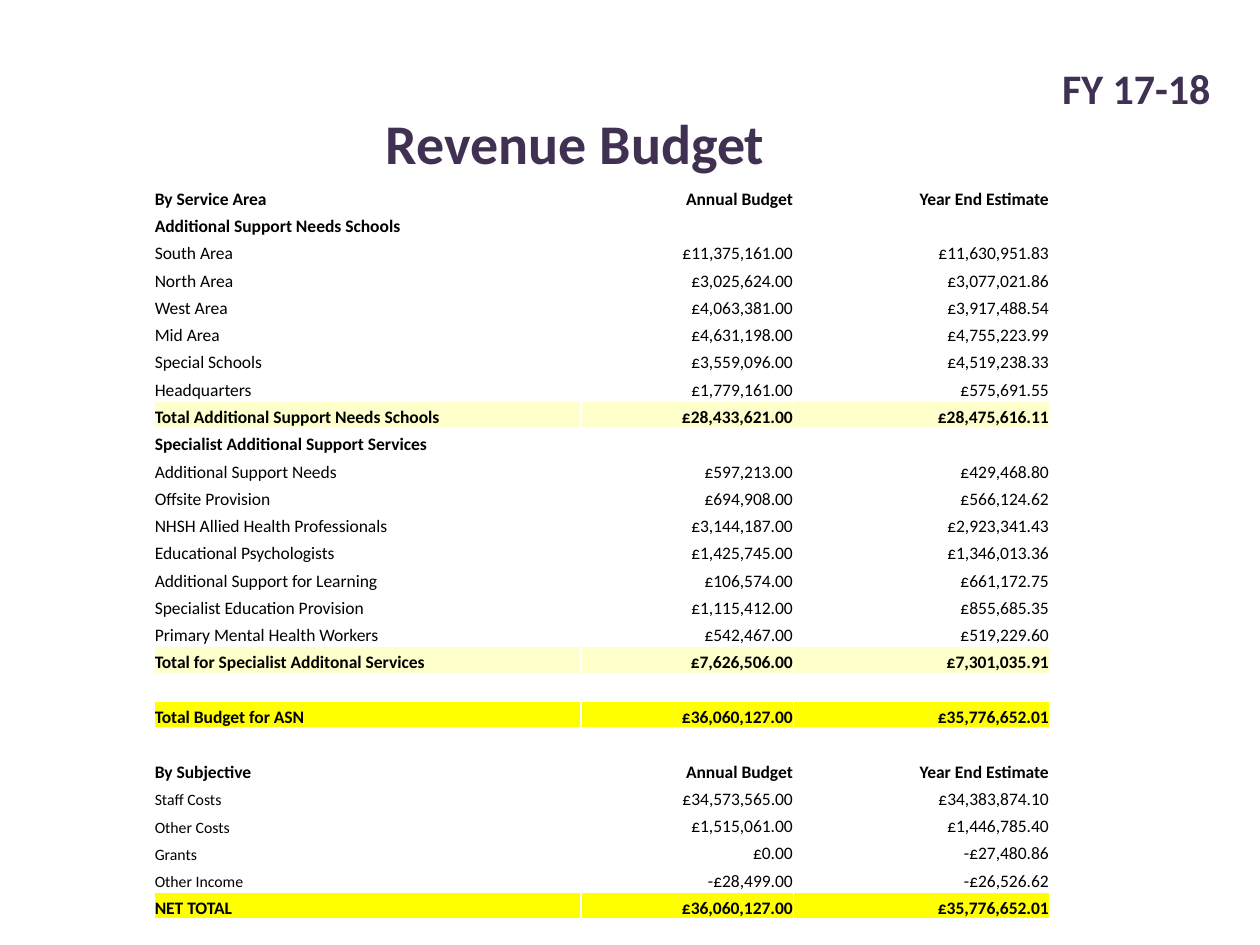
from dataclasses import dataclass

from lxml import etree
from pptx import Presentation
from pptx.dml.color import RGBColor
from pptx.enum.text import MSO_ANCHOR, MSO_AUTO_SIZE, PP_ALIGN
from pptx.oxml.ns import qn
from pptx.util import Cm, Pt

LEFT, CENTER, RIGHT = PP_ALIGN.LEFT, PP_ALIGN.CENTER, PP_ALIGN.RIGHT
BOTTOM = MSO_ANCHOR.BOTTOM
FIT_SHAPE = MSO_AUTO_SIZE.SHAPE_TO_FIT_TEXT
BLANK_LAYOUT = 6


@dataclass(frozen=True)
class Theme:
    font: str = "Calibri"
    heading: str = "403152"
    text: str = "000000"
    border: str = "FFFFFF"
    subtotal: str = "FFFFCC"
    total: str = "FFFF00"
    title_size: int = 32
    year_size: int = 24
    body_size: int = 10
    small_size: int = 9


COLUMN_WIDTHS = (8.61, 4.29, 5.16)
ROW_HEIGHT = 0.55

# Each row is its kind followed by the text of its cells.
BUDGET_ROWS = [
    ("header", "By Service Area", "Annual Budget", "Year End Estimate"),
    ("section", "Additional Support Needs Schools"),
    ("item", "South Area", "£11,375,161.00", "£11,630,951.83"),
    ("item", "North Area", "£3,025,624.00", "£3,077,021.86"),
    ("item", "West Area", "£4,063,381.00", "£3,917,488.54"),
    ("item", "Mid Area", "£4,631,198.00", "£4,755,223.99"),
    ("item", "Special Schools", "£3,559,096.00", "£4,519,238.33"),
    ("item", "Headquarters", "£1,779,161.00", "£575,691.55"),
    ("subtotal", "Total Additional Support Needs Schools", "£28,433,621.00", "£28,475,616.11"),
    ("section", "Specialist Additional Support Services"),
    ("item", "Additional Support Needs", "£597,213.00", "£429,468.80"),
    ("item", "Offsite Provision", "£694,908.00", "£566,124.62"),
    ("item", "NHSH Allied Health Professionals", "£3,144,187.00", "£2,923,341.43"),
    ("item", "Educational Psychologists", "£1,425,745.00", "£1,346,013.36"),
    ("item", "Additional Support for Learning", "£106,574.00", "£661,172.75"),
    ("item", "Specialist Education Provision", "£1,115,412.00", "£855,685.35"),
    ("item", "Primary Mental Health Workers", "£542,467.00", "£519,229.60"),
    ("subtotal", "Total for Specialist Additonal Services", "£7,626,506.00", "£7,301,035.91"),
    ("gap",),
    ("total", "Total Budget for ASN", "£36,060,127.00", "£35,776,652.01"),
    ("gap",),
    ("header", "By Subjective", "Annual Budget", "Year End Estimate"),
    ("small", "Staff Costs", "£34,573,565.00", "£34,383,874.10"),
    ("small", "Other Costs", "£1,515,061.00", "£1,446,785.40"),
    ("small", "Grants", "£0.00", "-£27,480.86"),
    ("small", "Other Income", "-£28,499.00", "-£26,526.62"),
    ("total", "NET TOTAL", "£36,060,127.00", "£35,776,652.01"),
]


class SlideBuilder:
    def __init__(self, slide, theme):
        self.slide = slide
        self.theme = theme

    def add_run(self, paragraph, text, size, color, bold):
        run = paragraph.add_run()
        run.text = text
        run.font.name = self.theme.font
        run.font.size = Pt(size)
        run.font.bold = bold
        run.font.color.rgb = RGBColor.from_string(color)

    def add_heading(self, text, left, top, width, height, size, alignment):
        shape = self.slide.shapes.add_textbox(Cm(left), Cm(top), Cm(width), Cm(height))
        frame = shape.text_frame
        frame.word_wrap = False
        frame.auto_size = FIT_SHAPE
        paragraph = frame.paragraphs[0]
        paragraph.alignment = alignment
        self.add_run(paragraph, text, size, self.theme.heading, True)

    def add_budget_table(self, rows, left, top):
        shape = self.slide.shapes.add_table(
            len(rows), len(COLUMN_WIDTHS), Cm(left), Cm(top),
            Cm(sum(COLUMN_WIDTHS)), Cm(ROW_HEIGHT * len(rows)))
        table = shape.table
        table.first_row = False
        table.horz_banding = False
        for column, width in zip(table.columns, COLUMN_WIDTHS):
            column.width = Cm(width)
        for row_index, (kind, *texts) in enumerate(rows):
            table.rows[row_index].height = Cm(ROW_HEIGHT)
            for column_index in range(len(COLUMN_WIDTHS)):
                text = texts[column_index] if column_index < len(texts) else ""
                self.style_cell(table.cell(row_index, column_index), kind, text, column_index == 0)
            if kind == "section":
                table.cell(row_index, 0).merge(table.cell(row_index, len(COLUMN_WIDTHS) - 1))

    def style_cell(self, cell, kind, text, is_label):
        theme = self.theme
        cell.vertical_anchor = BOTTOM
        cell.margin_left = cell.margin_top = cell.margin_right = Cm(0.02)
        cell.margin_bottom = 0
        fill_color = {"subtotal": theme.subtotal, "total": theme.total}.get(kind)
        if fill_color:
            cell.fill.solid()
            cell.fill.fore_color.rgb = RGBColor.from_string(fill_color)
        else:
            cell.fill.background()
        self.add_borders(cell)

        paragraph = cell.text_frame.paragraphs[0]
        paragraph.alignment = LEFT if is_label else RIGHT
        if text:
            size = theme.small_size if kind == "small" and is_label else theme.body_size
            self.add_run(paragraph, text, size, theme.text, kind not in ("item", "small"))
        else:
            # Keeps an empty cell from growing to the default text size.
            end_properties = etree.SubElement(paragraph._p, qn("a:endParaRPr"))
            end_properties.set("sz", str(theme.body_size * 100))

    def add_borders(self, cell):
        properties = cell._tc.get_or_add_tcPr()
        for position, side in enumerate(("lnL", "lnR", "lnT", "lnB")):
            line = etree.Element(qn(f"a:{side}"), w=str(Pt(1)))
            fill = etree.SubElement(line, qn("a:solidFill"))
            etree.SubElement(fill, qn("a:srgbClr"), val=self.theme.border)
            properties.insert(position, line)


def main():
    presentation = Presentation()
    presentation.slide_width = Cm(25.4)
    presentation.slide_height = Cm(19.05)
    slide = presentation.slides.add_slide(presentation.slide_layouts[BLANK_LAYOUT])
    theme = Theme()
    builder = SlideBuilder(slide, theme)
    builder.add_heading("Revenue Budget", 7.5, 2.06, 8.2, 1.63, theme.title_size, CENTER)
    builder.add_heading("FY 17-18", 21.16, 1.14, 3.53, 1.27, theme.year_size, LEFT)
    builder.add_budget_table(BUDGET_ROWS, 3.1, 3.68)
    presentation.save("out.pptx")


if __name__ == "__main__":
    main()
